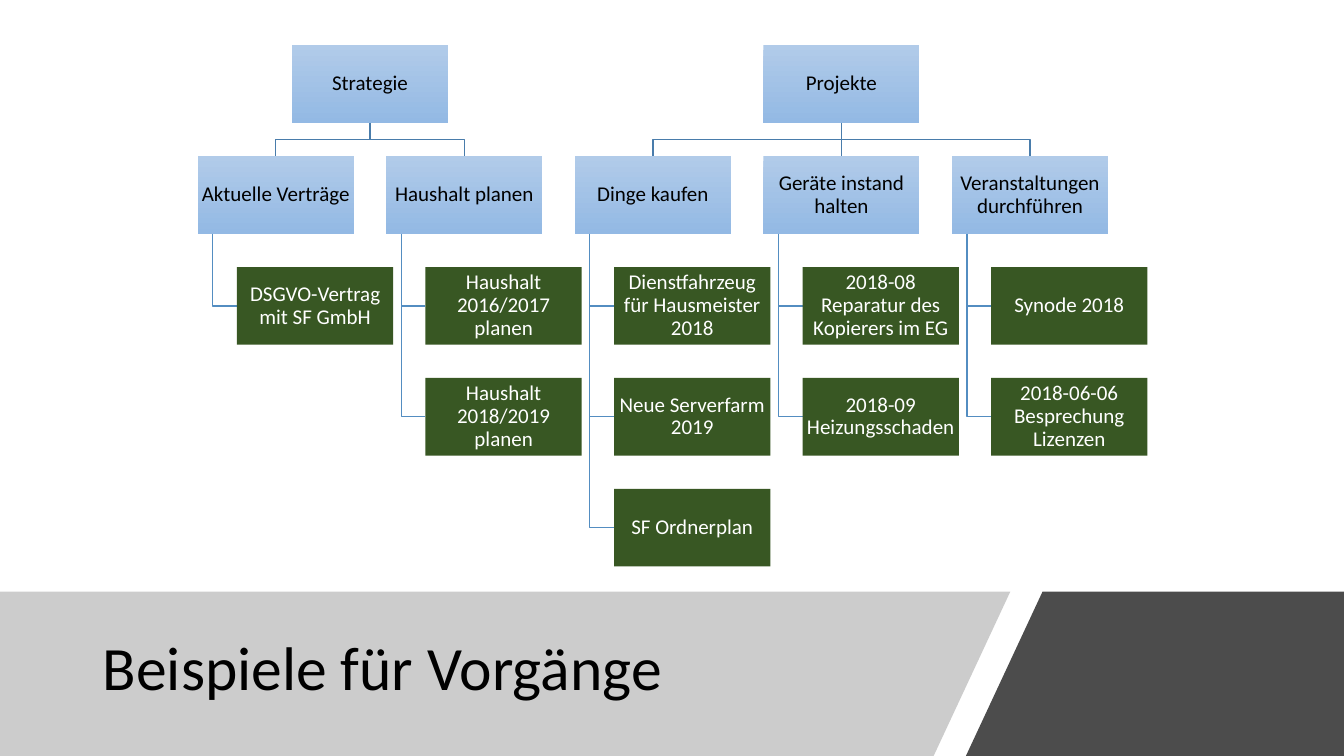
from lxml.etree import SubElement
from pptx import Presentation
from pptx.dml.color import RGBColor as Color
from pptx.enum.shapes import MSO_CONNECTOR as Connector, MSO_SHAPE as Preset
from pptx.enum.text import MSO_ANCHOR as Anchor, PP_ALIGN as Align
from pptx.oxml.ns import qn
from pptx.util import Inches, Pt

COLORS = {name: Color.from_string(value) for name, value in {
    "band": "808080", "corner": "000000", "text": "000000",
    "light_text": "FFFFFF", "light": "B1CBE9", "deep": "93B9E4",
    "leaf": "385723", "branch": "497CAB", "stem": "538DC1",
}.items()}
WIDTH, HEIGHT = 13.33, 7.5

# Grid of the tree
LEFT, TOP = 1.96, 0.45
COLUMN, ROW = 1.87, 1.1
BOX_WIDTH, BOX_HEIGHT = 1.55, 0.77
LEAF_INDENT, STEM_INDENT = 0.39, 0.15

TREE = {
    "Strategie": {
        "Aktuelle Verträge": ["DSGVO-Vertrag mit SF GmbH"],
        "Haushalt planen": ["Haushalt 2016/2017 planen", "Haushalt 2018/2019 planen"],
    },
    "Projekte": {
        "Dinge kaufen": ["Dienstfahrzeug für Hausmeister 2018", "Neue Serverfarm 2019",
                         "SF Ordnerplan"],
        "Geräte instand halten": ["2018-08 Reparatur des Kopierers im EG",
                                  "2018-09 Heizungsschaden"],
        "Veranstaltungen durchführen": ["Synode 2018", "2018-06-06 Besprechung Lizenzen"],
    },
}

presentation = Presentation()
presentation.slide_width = Inches(WIDTH)
presentation.slide_height = Inches(HEIGHT)
slide = presentation.slides.add_slide(presentation.slide_layouts[5])
shapes = slide.shapes


def add_outline(points, color, alpha=None):
    """Filled polygon when alpha is given, otherwise an open line."""
    corners = [(Inches(x), Inches(y)) for x, y in points]
    builder = shapes.build_freeform(*corners[0], scale=1.0)
    builder.add_line_segments(corners[1:], close=alpha is not None)
    shape = builder.convert_to_shape()
    shape.shadow.inherit = False
    if alpha is None:
        shape.fill.background()
        shape.line.color.rgb = COLORS[color]
        shape.line.width = Pt(1)
    else:
        shape.fill.solid()
        shape.fill.fore_color.rgb = COLORS[color]
        tone = shape._element.spPr.find(qn("a:solidFill"))[0]
        SubElement(tone, qn("a:alpha"), val=str(alpha * 1000))
        shape.line.fill.background()


def add_box(text, left, top, is_leaf=False):
    shape = shapes.add_shape(Preset.RECTANGLE, Inches(left), Inches(top),
                             Inches(BOX_WIDTH), Inches(BOX_HEIGHT))
    shape.shadow.inherit = False
    shape.line.fill.background()
    if is_leaf:
        shape.fill.solid()
        shape.fill.fore_color.rgb = COLORS["leaf"]
    else:
        shape.fill.gradient()
        shape.fill.gradient_angle = 270
        for stop, name in zip(shape.fill.gradient_stops, ("light", "deep")):
            stop.color.rgb = COLORS[name]
    frame = shape.text_frame
    frame.text = text
    frame.word_wrap = True
    frame.vertical_anchor = Anchor.MIDDLE
    frame.margin_left = frame.margin_right = Inches(0.01)
    frame.margin_top = frame.margin_bottom = Inches(0.01)
    paragraph = frame.paragraphs[0]
    paragraph.alignment = Align.CENTER
    paragraph.line_spacing = 0.9
    font = paragraph.runs[0].font
    font.name, font.size = "Calibri", Pt(15)
    font.color.rgb = COLORS["light_text" if is_leaf else "text"]
    return shape


# Footer band, title and slanted corner
BAND_TOP = 5.87
add_outline([(0, BAND_TOP), (10.02, BAND_TOP), (9.26, HEIGHT), (0, HEIGHT)], "band", 40)

title = shapes.title
shapes._spTree.append(title._element)  # in front of the band
title.left, title.top = Inches(0.92), Inches(6.05)
title.width, title.height = Inches(8.44), Inches(1.2)
title.text_frame.text = "Beispiele für Vorgänge"
title.text_frame.vertical_anchor = Anchor.MIDDLE
heading = title.text_frame.paragraphs[0]
heading.alignment = Align.LEFT
heading.line_spacing = 0.9
heading_font = heading.runs[0].font
heading_font.name, heading_font.size = "Calibri", Pt(44)
heading_font.color.rgb = COLORS["text"]

add_outline([(10.34, BAND_TOP), (WIDTH, BAND_TOP), (WIDTH, HEIGHT), (9.58, HEIGHT)],
            "corner", 70)

# Tree: each root is centred over its groups, leaves hang below each group
column = 0
group_top = TOP + ROW
for root, groups in TREE.items():
    root_left = LEFT + (column + (len(groups) - 1) / 2) * COLUMN
    root_center = root_left + BOX_WIDTH / 2
    root_bottom = TOP + BOX_HEIGHT
    root_box = add_box(root, root_left, TOP)

    for group, leaves in groups.items():
        group_left = LEFT + column * COLUMN
        group_center = group_left + BOX_WIDTH / 2
        group_box = add_box(group, group_left, group_top)

        # Branch from the root
        if abs(group_center - root_center) < 0.01:
            branch = shapes.add_connector(Connector.STRAIGHT, 0, 0, 0, 0)
            branch.begin_connect(root_box, 2)
            branch.end_connect(group_box, 0)
            branch.line.color.rgb = COLORS["branch"]
            branch.line.width = Pt(1)
            SubElement(branch._element.spPr, qn("a:effectLst"))
        else:
            bend = (root_bottom + group_top) / 2
            add_outline([(root_center, root_bottom), (root_center, bend),
                         (group_center, bend), (group_center, group_top)], "branch")

        # Leaves and their stems
        stem_left = group_left + STEM_INDENT
        leaf_left = group_left + LEAF_INDENT
        for row, leaf in enumerate(leaves, start=1):
            leaf_top = group_top + row * ROW
            leaf_middle = leaf_top + BOX_HEIGHT / 2
            add_outline([(stem_left, group_top + BOX_HEIGHT), (stem_left, leaf_middle),
                         (leaf_left, leaf_middle)], "stem")
            add_box(leaf, leaf_left, leaf_top, is_leaf=True)
        column += 1

presentation.save("out.pptx")
